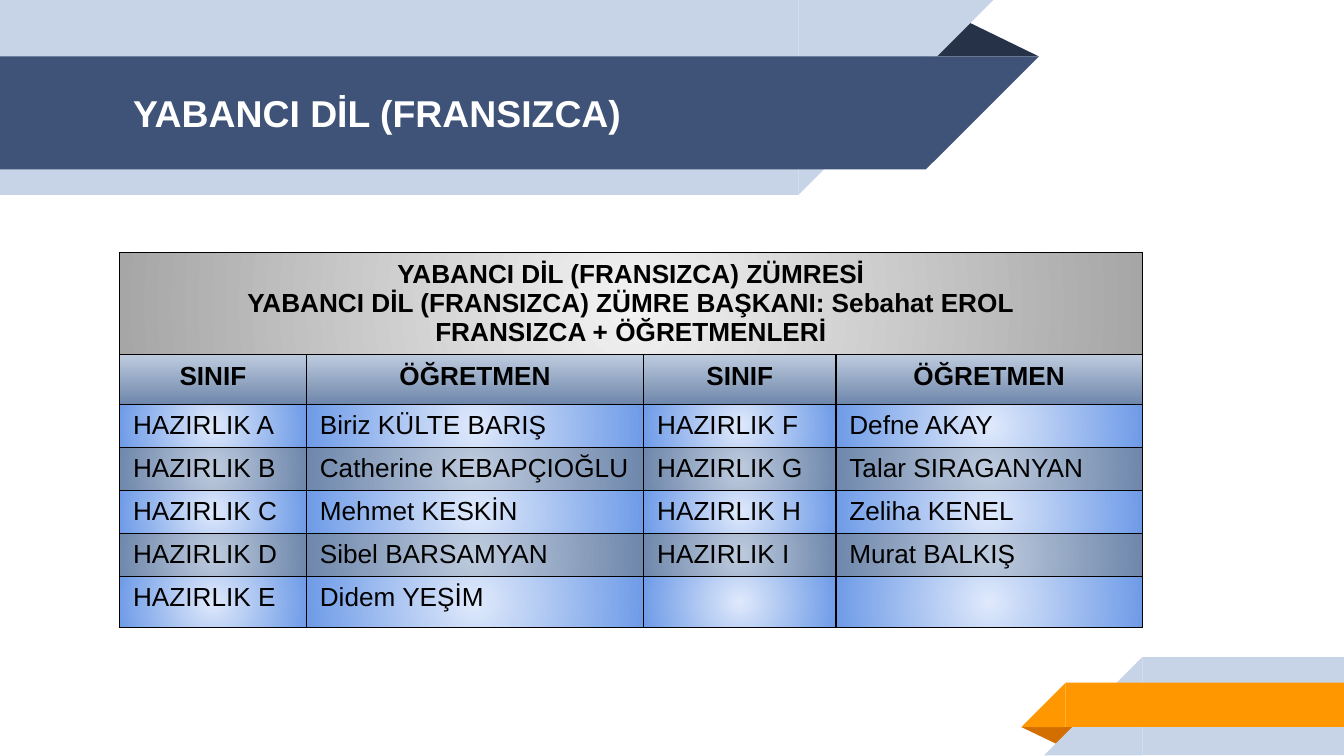
from typing import NamedTuple

from lxml.etree import SubElement
from pptx import Presentation
from pptx.dml.color import RGBColor
from pptx.enum.shapes import MSO_SHAPE
from pptx.enum.text import MSO_ANCHOR, MSO_AUTO_SIZE, PP_ALIGN
from pptx.oxml import parse_xml
from pptx.oxml.ns import nsdecls, qn
from pptx.slide import Slide
from pptx.table import _Cell
from pptx.text.text import _Paragraph
from pptx.util import Inches, Pt


class Decoration(NamedTuple):
    kind: MSO_SHAPE
    left: float
    top: float
    width: float
    height: float
    color: str
    rotation: int = 0
    flipped: bool = False


class Gradient(NamedTuple):
    center: str
    edge: str
    linear: bool = False


class TableRow(NamedTuple):
    height: float
    texts: tuple[str, ...]
    gradient: Gradient
    heading: bool = False


RECTANGLE = MSO_SHAPE.RECTANGLE
RIGHT_TRIANGLE = MSO_SHAPE.RIGHT_TRIANGLE
FOLD = MSO_SHAPE.ISOSCELES_TRIANGLE
PALE, NAVY, ORANGE = "C7D3E6", "3F5378", "FF9800"

DECORATIONS = [
    Decoration(FOLD, 6.88, 0.14, 0.85, 0.28, "263248"),
    Decoration(RECTANGLE, 0, 0, 5.94, 1.45, PALE),
    Decoration(RIGHT_TRIANGLE, 5.94, 0, 1.45, 1.45, PALE, 180, True),
    Decoration(RECTANGLE, 0, 0.42, 6.89, 0.84, NAVY),
    Decoration(RIGHT_TRIANGLE, 6.89, 0.42, 0.84, 0.84, NAVY, 180, True),
    Decoration(FOLD, 7.6, 5.41, 0.43, 0.14, "D26F00", 180),
    Decoration(RECTANGLE, 8.5, 4.89, 1.5, 0.73, PALE),
    Decoration(RIGHT_TRIANGLE, 7.77, 4.89, 0.73, 0.73, PALE, 0, True),
    Decoration(RECTANGLE, 7.93, 5.08, 2.07, 0.33, ORANGE),
    Decoration(RIGHT_TRIANGLE, 7.6, 5.08, 0.33, 0.33, ORANGE, 0, True),
]

GRAY = Gradient("F2F2F2", "A6A6A6")
HEADER = Gradient("BECBDE", "6E87AB", True)
BANDS = (Gradient("DFE9FB", "6E9BE7"), Gradient("BECBDE", "6E87AB"))

HEADING = (
    "YABANCI DİL (FRANSIZCA) ZÜMRESİ\n"
    "YABANCI DİL (FRANSIZCA) ZÜMRE BAŞKANI: Sebahat EROL\n"
    "FRANSIZCA + ÖĞRETMENLERİ"
)
CLASSES = [
    ("HAZIRLIK A", "Biriz KÜLTE BARIŞ", "HAZIRLIK F", "Defne AKAY"),
    ("HAZIRLIK B", "Catherine KEBAPÇIOĞLU", "HAZIRLIK G", "Talar SIRAGANYAN"),
    ("HAZIRLIK C", "Mehmet KESKİN", "HAZIRLIK H", "Zeliha KENEL"),
    ("HAZIRLIK D", "Sibel BARSAMYAN", "HAZIRLIK I", "Murat BALKIŞ"),
    ("HAZIRLIK E", "Didem YEŞİM", "", ""),
]
CLASS_HEIGHTS = (0.32, 0.32, 0.32, 0.32, 0.38)
COLUMN_WIDTHS = (1.39, 2.51, 1.43, 2.28)
TABLE_ROWS = [
    TableRow(0.76, (HEADING, "", "", ""), GRAY, True),
    TableRow(0.37, ("SINIF", "ÖĞRETMEN") * 2, HEADER, True),
] + [
    TableRow(height, texts, BANDS[index % 2])
    for index, (height, texts) in enumerate(zip(CLASS_HEIGHTS, CLASSES))
]


def rgb(color: str) -> RGBColor:
    return RGBColor.from_string(color)


def format_paragraph(paragraph: _Paragraph, size: int, bold: bool, color: str) -> None:
    values = {"name": "Arial", "size": Pt(size), "bold": bold}
    for run in paragraph.runs:
        for attribute, value in values.items():
            setattr(run.font, attribute, value)
        run.font.color.rgb = rgb(color)
    if not paragraph.runs:
        ending = SubElement(paragraph._p, qn("a:endParaRPr"), sz=str(size * 100))
        SubElement(ending, qn("a:latin"), typeface="Arial")


def draw_decoration(slide: Slide, item: Decoration) -> None:
    box = map(Inches, (item.left, item.top, item.width, item.height))
    shape = slide.shapes.add_shape(item.kind, *box)
    shape.shadow.inherit = False
    shape.fill.solid()
    shape.fill.fore_color.rgb = rgb(item.color)
    shape.line.fill.background()
    shape.rotation = item.rotation
    if item.kind == FOLD:
        shape.adjustments[0] = 0.324
    if item.flipped:
        shape.element.spPr.find(qn("a:xfrm")).set("flipH", "1")


def draw_title(slide: Slide, text: str) -> None:
    title = slide.shapes.title
    box = {"left": 0.89, "top": 0.42, "width": 5.75, "height": 0.84}
    for attribute, value in box.items():
        setattr(title, attribute, Inches(value))
    frame = title.text_frame
    frame.text = text
    values = {
        "word_wrap": True,
        "auto_size": MSO_AUTO_SIZE.NONE,
        "vertical_anchor": MSO_ANCHOR.MIDDLE,
    }
    for side in ("left", "top", "right", "bottom"):
        values[f"margin_{side}"] = Inches(0.1)
    for attribute, value in values.items():
        setattr(frame, attribute, value)
    paragraph = frame.paragraphs[0]
    paragraph.alignment = PP_ALIGN.LEFT
    format_paragraph(paragraph, 20, True, "FFFFFF")
    title.element.getparent().append(title.element)


def style_cell(cell: _Cell, gradient: Gradient) -> None:
    properties = cell._tc.get_or_add_tcPr()
    for side in ("lnL", "lnR", "lnT", "lnB"):
        border = SubElement(properties, qn(f"a:{side}"), w=str(Pt(0.75)))
        fill = SubElement(border, qn("a:solidFill"))
        SubElement(fill, qn("a:srgbClr"), val="000000")
    direction = (
        '<a:lin ang="5400000" scaled="0"/>'
        if gradient.linear
        else '<a:path path="circle"><a:fillToRect l="50000" t="50000"'
        ' r="50000" b="50000"/></a:path>'
    )
    properties.append(parse_xml(
        f'<a:gradFill {nsdecls("a")} rotWithShape="1"><a:gsLst>'
        f'<a:gs pos="0"><a:srgbClr val="{gradient.center}"/></a:gs>'
        f'<a:gs pos="100000"><a:srgbClr val="{gradient.edge}"/></a:gs>'
        f"</a:gsLst>{direction}</a:gradFill>"
    ))


def draw_table(slide: Slide) -> None:
    width = Inches(sum(COLUMN_WIDTHS))
    height = Inches(sum(row.height for row in TABLE_ROWS))
    table = slide.shapes.add_table(
        len(TABLE_ROWS), len(COLUMN_WIDTHS), Inches(0.89), Inches(1.88), width, height
    ).table
    table.first_row = False
    table.horz_banding = False
    for column, column_width in zip(table.columns, COLUMN_WIDTHS):
        column.width = Inches(column_width)
    for table_row, row in zip(table.rows, TABLE_ROWS):
        table_row.height = Inches(row.height)
        for cell, text in zip(table_row.cells, row.texts):
            style_cell(cell, row.gradient)
            if text:
                cell.text = text
            for paragraph in cell.text_frame.paragraphs:
                paragraph.alignment = PP_ALIGN.CENTER if row.heading else PP_ALIGN.LEFT
                format_paragraph(paragraph, 14, row.heading, "000000")
    table.cell(0, 0).merge(table.cell(0, len(COLUMN_WIDTHS) - 1))


def main() -> None:
    presentation = Presentation()
    presentation.slide_width = Inches(10)
    presentation.slide_height = presentation.slide_width * 9 // 16
    slide = presentation.slides.add_slide(presentation.slide_layouts[5])
    for item in DECORATIONS:
        draw_decoration(slide, item)
    draw_title(slide, "YABANCI DİL (FRANSIZCA)")
    draw_table(slide)
    presentation.save("out.pptx")


if __name__ == "__main__":
    main()
